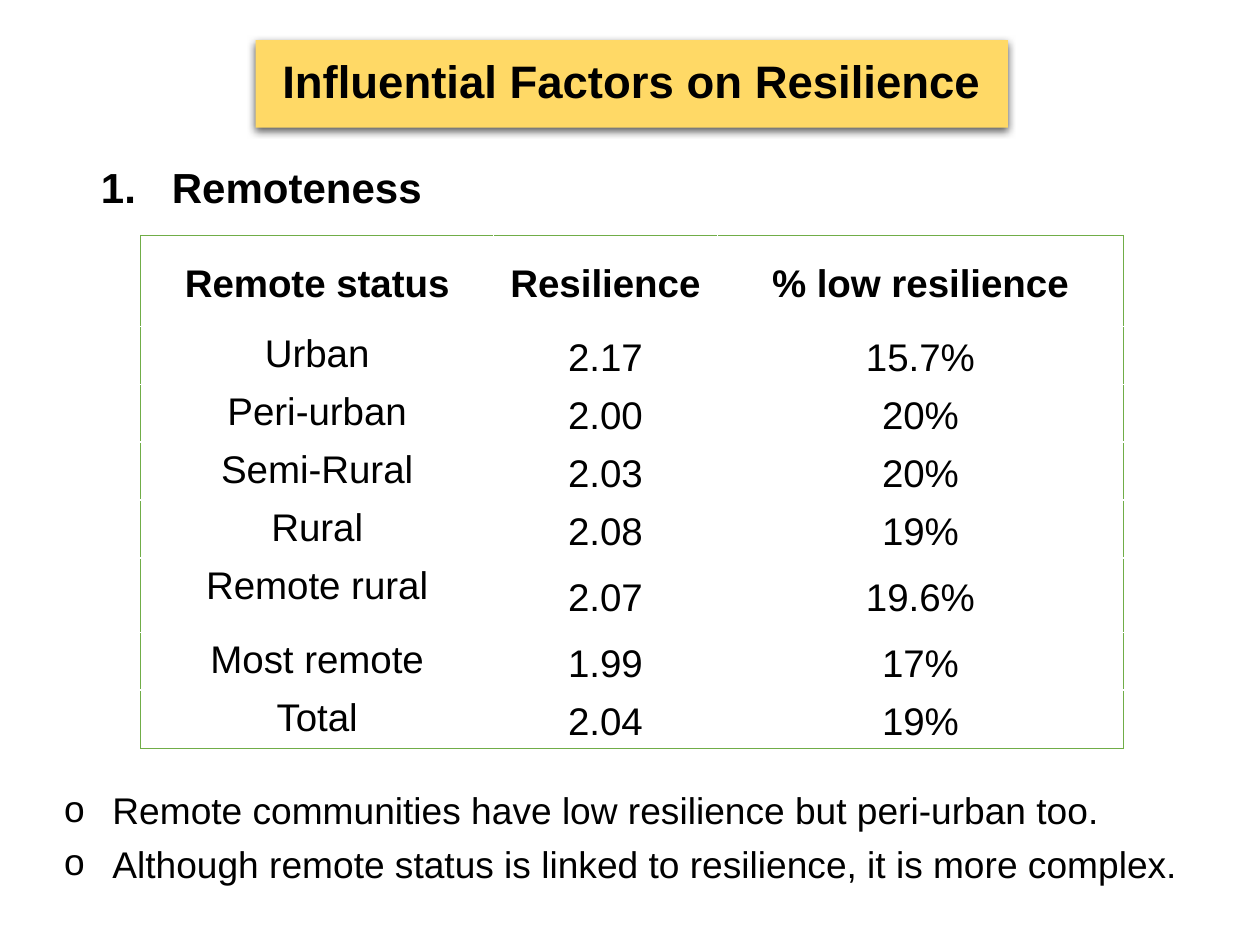
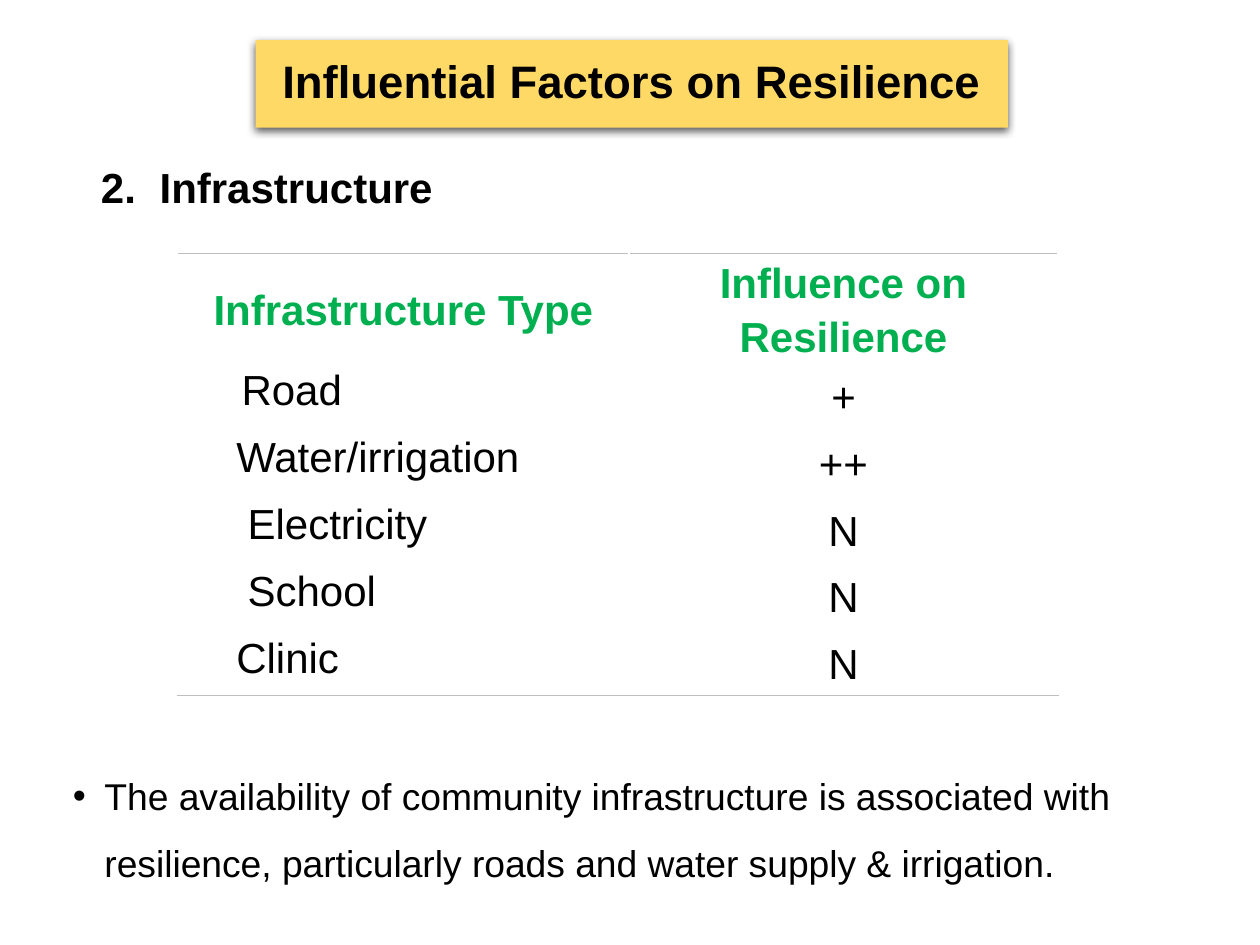
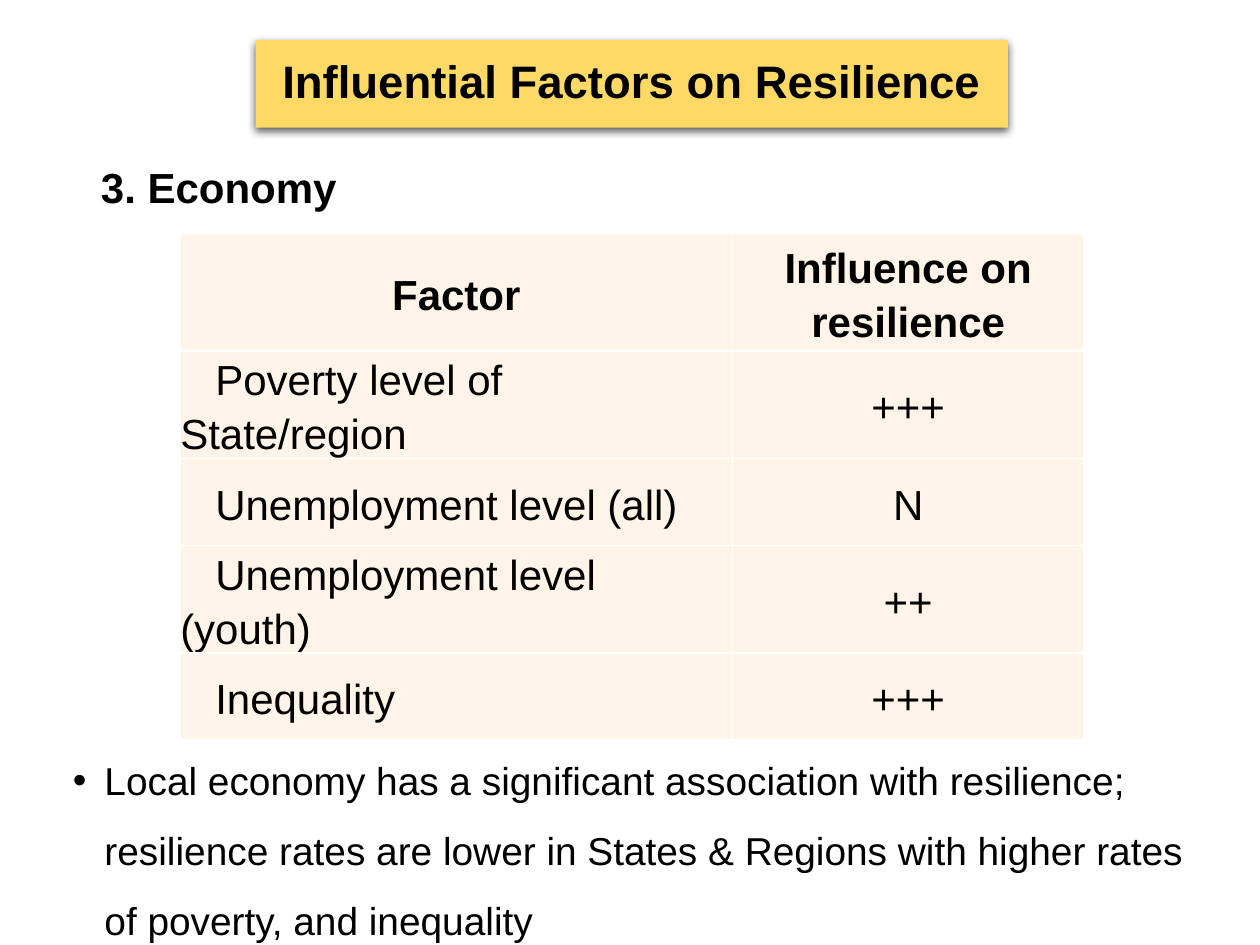
from lxml.etree import SubElement
from pptx import Presentation
from pptx.dml.color import RGBColor
from pptx.enum.text import MSO_ANCHOR as Anchor, MSO_AUTO_SIZE as AutoSize, PP_ALIGN as Align
from pptx.oxml import parse_xml
from pptx.oxml.ns import nsdecls, qn
from pptx.util import Pt

COLORS = {
    "text": "000000",
    "title_band": "FFD966",
    "outline": "70AD47",
    "rule": "BFBFBF",
    "heading": "00B050",
    "cell": "FFF4E7",
    "grid": "FFFFFF",
}
FONT = "Arial"
TITLE = "Influential Factors on Resilience"
TWO_CONTENT = 3
SIDES = ("L", "R", "T", "B")


class FactorDeck:
    """Holds the shared style and the current slide."""

    def __init__(self):
        self.deck = Presentation()
        self.deck.slide_width, self.deck.slide_height = Pt(720), Pt(540)
        self.page = None

    def color(self, name):
        return RGBColor.from_string(COLORS[name])

    def place(self, box, left, top, width, height):
        box.left, box.top, box.width, box.height = map(Pt, (left, top, width, height))
        box.text_frame.word_wrap = True
        box.text_frame.auto_size = AutoSize.NONE

    def format(self, para, size, bold=False, color="text", align=Align.LEFT,
               spacing=1.15, before=0):
        para.alignment = align
        para.line_spacing = spacing
        para.space_before = Pt(before)
        for span in para.runs:
            span.font.name = FONT
            span.font.size = Pt(size)
            span.font.bold = bold
            span.font.color.rgb = self.color(color)

    def indent(self, para, margin, first=0):
        props = para._p.get_or_add_pPr()
        props.set("marL", str(Pt(margin)))
        props.set("indent", str(Pt(first)))
        return props

    def new_page(self):
        self.page = self.deck.slides.add_slide(self.deck.slide_layouts[TWO_CONTENT])
        self.title()

    def title(self):
        band = self.page.shapes.title
        self.place(band, 146, 23, 430, 50)
        band.fill.solid()
        band.fill.fore_color.rgb = self.color("title_band")
        band._element.spPr.append(parse_xml(
            f'<a:effectLst {nsdecls("a")}><a:outerShdw blurRad="{Pt(4.5)}" '
            f'dist="{Pt(1.5)}" dir="5400000" rotWithShape="0">'
            '<a:srgbClr val="000000"><a:alpha val="63000"/></a:srgbClr>'
            '</a:outerShdw></a:effectLst>'))
        band.text_frame.vertical_anchor = Anchor.MIDDLE
        band.text_frame.text = TITLE
        self.format(band.text_frame.paragraphs[0], 26, True, align=Align.CENTER, spacing=0.9)

    def heading(self, text, hanging=0, numbered=False):
        box = self.page.placeholders[1]
        self.place(box, 50.5, 92, 620, 37)
        box.text_frame.text = text
        para = box.text_frame.paragraphs[0]
        props = self.indent(para, hanging, -hanging)
        if numbered:
            SubElement(props, qn("a:buFont"), typeface="+mj-lt")
            SubElement(props, qn("a:buAutoNum"), type="arabicPeriod")
        else:
            SubElement(props, qn("a:buNone"))
        self.format(para, 24, True, spacing=0.9)

    def bullets(self, place, lines, size, mark="•", hanging=18, spacing=1.5, align=Align.LEFT):
        box = self.page.placeholders[2]
        self.place(box, *place)
        box.text_frame.text = "\n".join(lines)
        for number, para in enumerate(box.text_frame.paragraphs):
            props = self.indent(para, hanging, -hanging)
            SubElement(props, qn("a:buFont"), typeface=FONT)
            SubElement(props, qn("a:buChar"), char=mark)
            self.format(para, size, align=align, spacing=spacing, before=10 if number else 0)

    def border(self, cell, sides, color, width):
        props = cell._tc.get_or_add_tcPr()
        for position, side in enumerate(s for s in SIDES if s in sides):
            props.insert(position, parse_xml(
                f'<a:ln{side} {nsdecls("a")} w="{Pt(width)}"><a:solidFill>'
                f'<a:srgbClr val="{COLORS[color]}"/></a:solidFill></a:ln{side}>'))

    def table(self, left, top, widths, heights, rows, size, line, line_width,
              edges="", fill=None, header="text", label_anchor=Anchor.TOP, indents=None):
        """Edges names the outer sides to rule; without it every cell is ruled."""
        frame = self.page.shapes.add_table(len(rows), len(widths), Pt(left), Pt(top),
                                           Pt(sum(widths)), Pt(sum(heights)))
        grid = frame.table
        grid.first_row = grid.horz_banding = False
        for column, width in zip(grid.columns, widths):
            column.width = Pt(width)
        for r, (texts, height) in enumerate(zip(rows, heights)):
            grid.rows[r].height = Pt(height)
            for c, text in enumerate(texts):
                cell = grid.cell(r, c)
                cell.margin_left = cell.margin_right = cell.margin_top = cell.margin_bottom = 0
                is_label = r > 0 and c == 0
                cell.vertical_anchor = label_anchor if is_label else Anchor.MIDDLE
                if fill:
                    cell.fill.solid()
                    cell.fill.fore_color.rgb = self.color(fill)
                else:
                    cell.fill.background()
                outer = {"L": c == 0, "R": c == len(widths) - 1,
                         "T": r == 0, "B": r == len(rows) - 1}
                sides = [s for s in edges if outer[s]] if edges else SIDES
                self.border(cell, sides, line, line_width)
                cell.text_frame.text = text
                para = cell.text_frame.paragraphs[0]
                indented = is_label and indents
                if indented:
                    self.indent(para, 0, indents[r - 1])
                self.format(para, size, r == 0, "text" if r else header,
                            Align.LEFT if indented else Align.CENTER)


def main():
    style = FactorDeck()

    # Remoteness
    style.new_page()
    style.heading("Remoteness", hanging=40.5, numbered=True)
    style.table(80.5, 134.5, [201.5, 128, 232], [52] + [33.1] * 4 + [42.5] + [33.1] * 2, [
        ("Remote status", "Resilience", "% low resilience"),
        ("Urban", "2.17", "15.7%"),
        ("Peri-urban", "2.00", "20%"),
        ("Semi-Rural", "2.03", "20%"),
        ("Rural", "2.08", "19%"),
        ("Remote rural", "2.07", "19.6%"),
        ("Most remote", "1.99", "17%"),
        ("Total", "2.04", "19%"),
    ], 22, "outline", 0.5, edges="LRTB")
    style.bullets((29.5, 451.5, 657.5, 61), [
        "Remote communities have low resilience but peri-urban too.",
        "Although remote status is linked to resilience, it is more complex.",
    ], 21.2, mark="o", hanging=27.5, spacing=0.8, align=Align.JUSTIFY)

    # Infrastructure
    style.new_page()
    style.heading("2.\tInfrastructure", hanging=33.5)
    style.table(101.5, 144.7, [258, 245], [61.5] + [38.2] * 5, [
        ("Infrastructure Type", "Influence on Resilience"),
        ("Road", "+"),
        ("Water/irrigation", "++"),
        ("Electricity", "N"),
        ("School", "N"),
        ("Clinic", "N"),
    ], 24, "rule", 0.5, edges="TB", header="heading", indents=[36.5, 33.5, 40, 40, 33.5])
    style.bullets((34.5, 425.5, 657.5, 85.5), [
        "The availability of community infrastructure is associated with resilience, "
        "particularly roads and water supply & irrigation.",
    ], 21.3)

    # Economy
    style.new_page()
    style.heading("3. Economy")
    style.table(103, 133.5, [315.5, 201], [67] + [49.7] * 4, [
        ("Factor", "Influence on resilience"),
        ("Poverty level of State/region", "+++"),
        ("Unemployment level (all)", "N"),
        ("Unemployment level (youth)", "++"),
        ("Inequality", "+++"),
    ], 24, "grid", 1, fill="cell", label_anchor=Anchor.MIDDLE, indents=[20] * 4)
    style.bullets((34.5, 415.5, 669, 127.5), [
        "Local economy has a significant association with resilience; resilience rates "
        "are lower in States & Regions with higher rates of poverty, and inequality",
    ], 22.2)

    style.deck.save("out.pptx")


if __name__ == "__main__":
    main()
